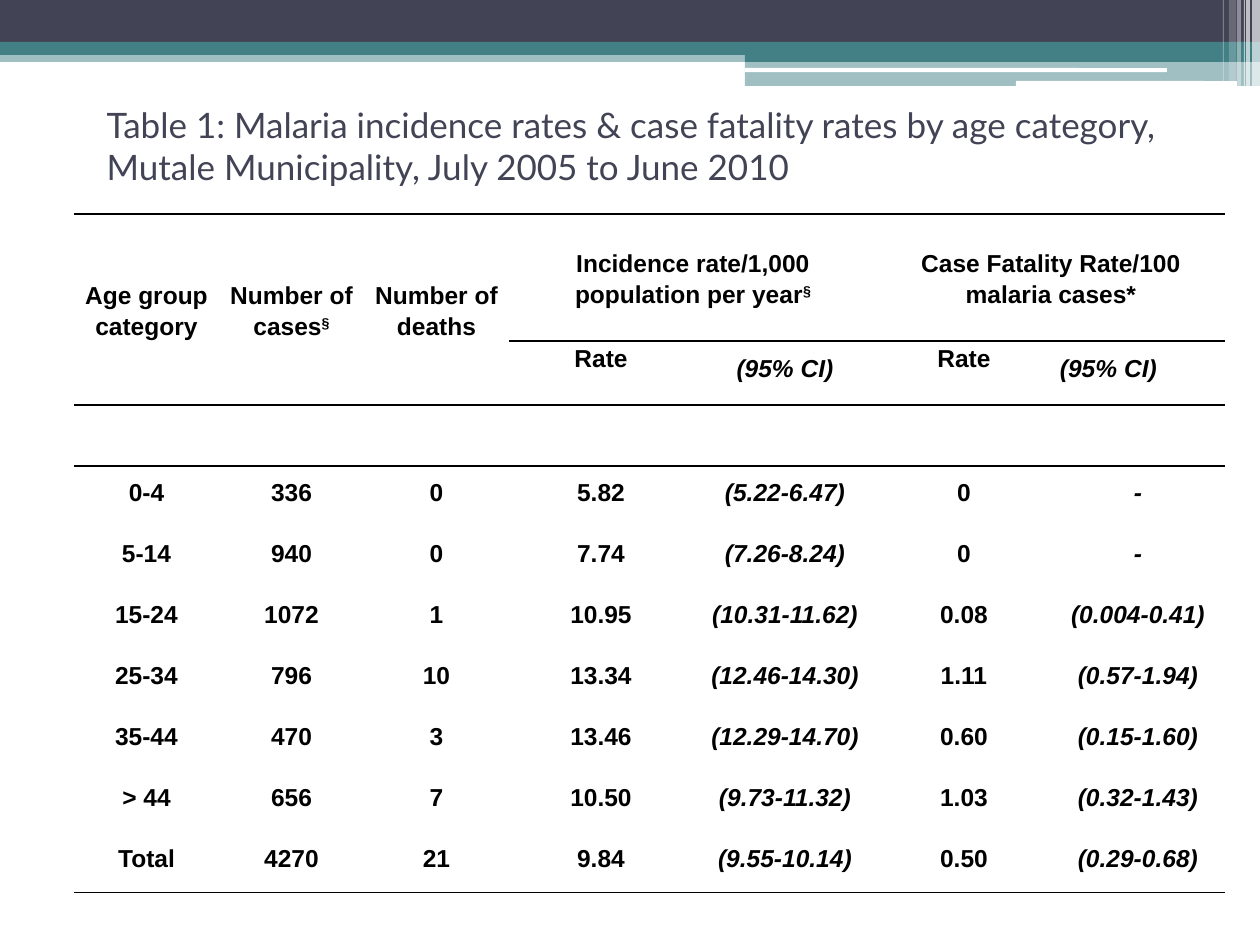
import pptx
import pptx.dml.color
import pptx.enum.shapes
import pptx.enum.text
import pptx.oxml.ns
import pptx.util
from lxml import etree

EMU_PER_PX = 914400 / 126
COLORS = {"navy": "424456", "teal": "438086", "white": "FFFFFF", "black": "000000"}
NO_STYLE = "{2D5ABB26-0587-4C30-8999-92F81FD0307C}"
SHAPES = pptx.enum.shapes.MSO_SHAPE
ALIGN = pptx.enum.text.PP_ALIGN
MIDDLE = pptx.enum.text.MSO_ANCHOR.MIDDLE
qn = pptx.oxml.ns.qn


def px(length):
    return pptx.util.Emu(round(length * EMU_PER_PX))


def rgb(name):
    return pptx.dml.color.RGBColor.from_string(COLORS[name])


class SlideBuilder:
    title_font, body_font = "Lato", "Arial"
    title_size, body_size = 20, 14

    def __init__(self, slide):
        self.slide = slide

    def bar(self, box, color, opacity=100, kind=SHAPES.RECTANGLE):
        bar = self.slide.shapes.add_shape(kind, *map(px, box))
        bar.shadow.inherit = False
        bar.line.fill.background()
        bar.fill.solid()
        bar.fill.fore_color.rgb = rgb(color)
        if opacity < 100:
            srgb = bar.fill._xPr.find(".//" + qn("a:srgbClr"))
            etree.SubElement(srgb, qn("a:alpha"), val=str(opacity * 1000))

    def title(self, box, text):
        title = self.slide.shapes.title
        title.left, title.top, title.width, title.height = map(px, box)
        frame = title.text_frame
        frame.text = text
        frame.word_wrap = True
        frame.auto_size = pptx.enum.text.MSO_AUTO_SIZE.NONE
        frame.vertical_anchor = MIDDLE
        paragraph = frame.paragraphs[0]
        paragraph.alignment = ALIGN.LEFT
        self.set_font(paragraph.font, self.title_font, self.title_size, "navy")

    def set_font(self, font, name, size, color):
        font.name, font.size = name, pptx.util.Pt(size)
        font.color.rgb = rgb(color)

    def table(self, left, top, widths, heights):
        frame = self.slide.shapes.add_table(
            len(heights), len(widths), px(left), px(top), px(sum(widths)), px(sum(heights)))
        table = frame.table
        table.first_row = table.horz_banding = False
        table._tbl.tblPr.find(qn("a:tableStyleId")).text = NO_STYLE
        for column, width in zip(table.columns, widths):
            column.width = px(width)
        for row, height in zip(table.rows, heights):
            row.height = px(height)
        return table

    def cell(self, cell, text, spacing=1.5, italic=False, align=ALIGN.CENTER, anchor=None):
        """Write a cell; a "§" in the text becomes superscript."""
        cell.margin_left = cell.margin_right = px(9)
        cell.margin_top = cell.margin_bottom = 0
        cell.vertical_anchor = anchor
        paragraph = cell.text_frame.paragraphs[0]
        paragraph.alignment = align
        paragraph.line_spacing = spacing
        paragraph.space_after = pptx.util.Pt(10)
        self.set_font(paragraph.font, self.body_font, self.body_size, "black")
        paragraph.font.bold, paragraph.font.italic = True, italic
        words, mark, _ = text.partition("§")
        paragraph.add_run().text = words
        if mark:
            note = paragraph.add_run()
            note.text = mark
            note.font._element.set("baseline", "30000")

    def rules(self, cell, sides):
        """Draw 1 pt rules on the given sides (T, B) and leave the cell unfilled."""
        properties = cell._tc.get_or_add_tcPr()
        for side in sides:
            line = etree.SubElement(properties, qn("a:ln" + side), w="12700")
            fill = etree.SubElement(line, qn("a:solidFill"))
            etree.SubElement(fill, qn("a:srgbClr"), val=COLORS["black"])
        cell.fill.background()


def main():
    deck = pptx.Presentation()
    deck.slide_width, deck.slide_height = px(1260), px(945)
    builder = SlideBuilder(deck.slides.add_slide(deck.slide_layouts[5]))

    # Banner across the top
    builder.bar((0, 50, 1260, 12), "teal", 50)
    builder.bar((0, 0, 1260, 42), "navy")
    builder.bar((0, 42, 1260, 13), "teal")
    builder.bar((745, 49, 515, 13), "teal")
    builder.bar((745, 62, 515, 24), "teal", 50)
    for box in ((745, 68, 422, 4), (1016, 81, 221, 5)):
        builder.bar(box, "white", kind=SHAPES.ROUNDED_RECTANGLE)

    # Translucent stripes at the right edge
    stripes = ((1252, 8, 86, 65), (1246, 4, 86, 65), (1244, 1, 86, 60),
               (1237, 4, 86, 40), (1229, 7, 81, 20), (1223, 1, 81, 30))
    for left, width, height, opacity in stripes:
        builder.bar((left, 0, width, height), "white", opacity)

    builder.title((94, 86, 1111, 118),
                  "Table 1: Malaria incidence rates & case fatality rates by age category, "
                  "Mutale Municipality, July 2005 to June 2010")

    # Table grid and rules
    table = builder.table(74, 214, [145] * 3 + [184] * 2 + [174] * 2, [127, 64] + [61] * 8)
    rule_sides = {0: "TB", 1: "TB", 2: "T", 9: "B"}
    for row_index, row in enumerate(table.rows):
        for cell in row.cells:
            builder.rules(cell, rule_sides.get(row_index, ""))

    # Column headings
    headings = (
        (0, 2, 1, "Age group category"),
        (1, 2, 1, "Number of cases§"),
        (2, 2, 1, "Number of deaths"),
        (3, 1, 2, "Incidence rate/1,000 population per year§"),
        (5, 1, 2, "Case Fatality Rate/100 malaria cases*"),
    )
    for column, row_span, column_span, text in headings:
        heading = table.cell(0, column)
        heading.merge(table.cell(row_span - 1, column + column_span - 1))
        builder.cell(heading, text, spacing=1.15, anchor=MIDDLE)
    for column, align in ((3, ALIGN.CENTER), (5, ALIGN.JUSTIFY)):
        builder.cell(table.cell(1, column), "Rate", spacing=1.15)
        builder.cell(table.cell(1, column + 1), "(95% CI)", italic=True, align=align)

    # Rates by age group, below one empty row
    age_groups = (
        ("0-4", "336", "0", "5.82", "(5.22-6.47)", "0", "-"),
        ("5-14", "940", "0", "7.74", "(7.26-8.24)", "0", "-"),
        ("15-24", "1072", "1", "10.95", "(10.31-11.62)", "0.08", "(0.004-0.41)"),
        ("25-34", "796", "10", "13.34", "(12.46-14.30)", "1.11", "(0.57-1.94)"),
        ("35-44", "470", "3", "13.46", "(12.29-14.70)", "0.60", "(0.15-1.60)"),
        ("> 44", "656", "7", "10.50", "(9.73-11.32)", "1.03", "(0.32-1.43)"),
        ("Total", "4270", "21", "9.84", "(9.55-10.14)", "0.50", "(0.29-0.68)"),
    )
    for row_index, values in enumerate(age_groups, start=3):
        for column, value in enumerate(values):
            builder.cell(table.cell(row_index, column), value, italic=column in (4, 6))

    deck.save("out.pptx")


if __name__ == "__main__":
    main()
